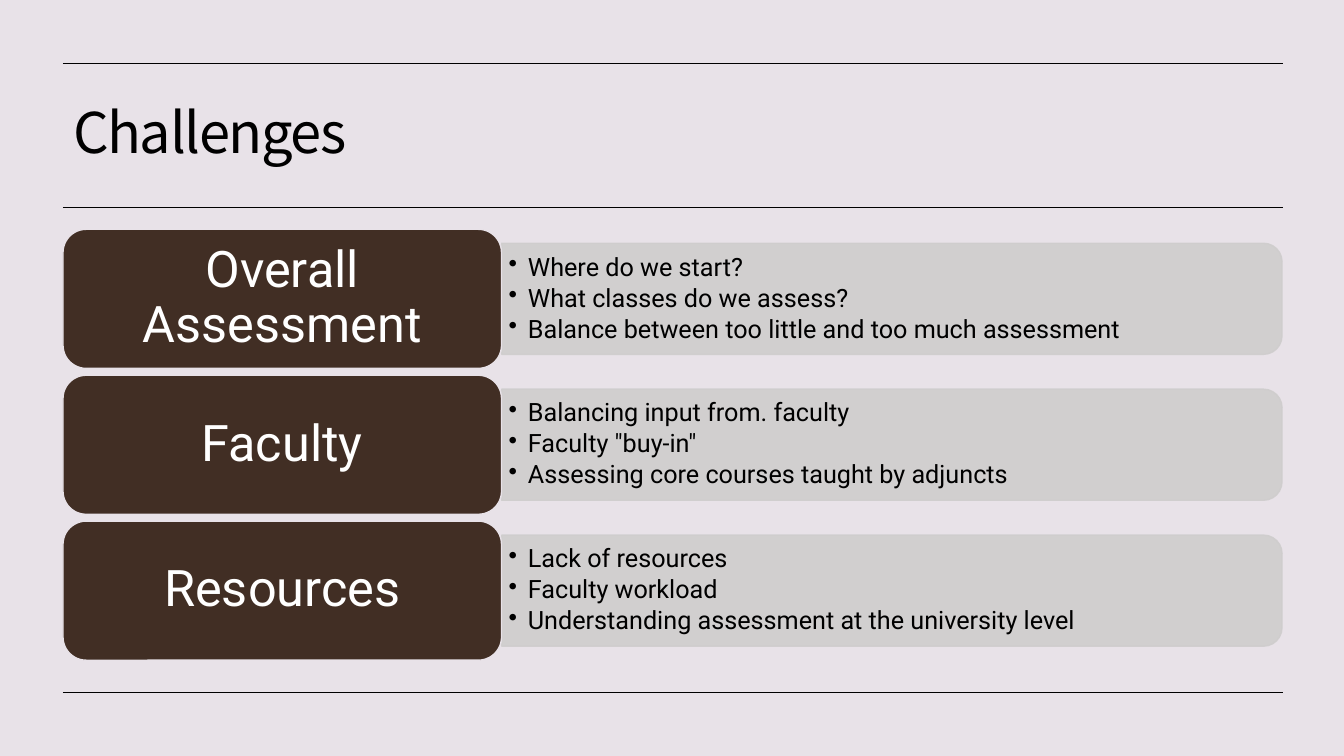
from dataclasses import dataclass

import pptx
import pptx.dml.color
import pptx.enum.shapes
import pptx.enum.text
import pptx.oxml
import pptx.oxml.ns
import pptx.util

BACKGROUND = pptx.dml.color.RGBColor(0xE8, 0xE2, 0xE8)
BAND = pptx.dml.color.RGBColor(0xCF, 0xCD, 0xCD)
BROWN = pptx.dml.color.RGBColor(0x41, 0x2E, 0x24)
BLACK = pptx.dml.color.RGBColor(0, 0, 0)
WHITE = pptx.dml.color.RGBColor(0xFF, 0xFF, 0xFF)
TITLE_FONT = "Noto Sans CJK KR"
BODY_FONT = "Roboto"

SLIDE_WIDTH = pptx.util.Inches(13.33)
SLIDE_HEIGHT = pptx.util.Inches(7.5)

# Grid of 100 columns by 100 rows
LEFT, RIGHT = 4.69, 95.47
RULE_ROWS = (8.33, 27.47, 91.6)
FIRST_ROW, ROW_PITCH = 30.33, 19.3
LABEL_WIDTH, LABEL_HEIGHT = 32.63, 18.4
BAND_LEFT, BAND_WIDTH, BAND_HEIGHT = 37.33, 58.06, 14.7
POINTS_WIDTH, POINTS_HEIGHT = 57.7, 13.33


@dataclass(frozen=True)
class Challenge:
    name: str
    points: tuple[str, ...]


CHALLENGES = (
    Challenge("Overall Assessment", (
        "Where do we start?",
        "What classes do we assess?",
        "Balance between too little and too much assessment",
    )),
    Challenge("Faculty", (
        "Balancing input from. faculty",
        'Faculty "buy-in"',
        "Assessing core courses taught by adjuncts",
    )),
    Challenge("Resources", (
        "Lack of resources",
        "Faculty workload",
        "Understanding assessment at the university level",
    )),
)


def columns(count: float) -> int:
    return round(SLIDE_WIDTH * count / 100)


def rows(count: float) -> int:
    return round(SLIDE_HEIGHT * count / 100)


def set_font(paragraph, name: str, size: float, color) -> None:
    paragraph.line_spacing = 0.9
    paragraph.font.name = name
    paragraph.font.size = pptx.util.Pt(size)
    paragraph.font.color.rgb = color


def set_frame(frame, side: float, top: float) -> None:
    """Wrap and centre the text vertically, with margins in inches."""
    frame.word_wrap = True
    frame.auto_size = pptx.enum.text.MSO_AUTO_SIZE.NONE
    frame.vertical_anchor = pptx.enum.text.MSO_ANCHOR.MIDDLE
    frame.margin_left = frame.margin_right = pptx.util.Inches(side)
    frame.margin_top = frame.margin_bottom = pptx.util.Inches(top)


def paint(shape, fill, line) -> None:
    shape.shadow.inherit = False
    shape.fill.solid()
    shape.fill.fore_color.rgb = fill
    shape.line.color.rgb = line
    shape.line.width = pptx.util.Pt(1)


def add_bullet(paragraph) -> None:
    properties = paragraph._p.get_or_add_pPr()
    indent = pptx.util.Inches(0.19)
    properties.set("marL", str(indent))
    properties.set("indent", str(-indent))
    bullet = pptx.oxml.ns.qn("a:buChar")
    properties.append(properties.makeelement(bullet, {"char": "•"}))


def add_title(slide) -> None:
    title = slide.shapes.title
    title.left, title.top = columns(LEFT), rows(10)
    title.width, title.height = columns(90.6), rows(15.87)
    set_frame(title.text_frame, 0.1, 0.05)
    title.text_frame.text = "Challenges"
    heading = title.text_frame.paragraphs[0]
    heading.alignment = pptx.enum.text.PP_ALIGN.LEFT
    set_font(heading, TITLE_FONT, 40, BLACK)
    heading.runs[0]._r.get_or_add_rPr().set("spc", "-100")


def add_rule(slide, row: float) -> None:
    rule = slide.shapes.add_connector(
        pptx.enum.shapes.MSO_CONNECTOR.STRAIGHT,
        columns(LEFT), rows(row), columns(RIGHT), rows(row))
    rule.line.color.rgb = BLACK
    rule.line.width = pptx.util.Pt(0.5)
    properties = rule.element.spPr
    properties.append(properties.makeelement(pptx.oxml.ns.qn("a:effectLst"), {}))


def add_band(slide, middle: float) -> None:
    """Turn a shape with two round top corners so that they face right."""
    thickness, length = rows(BAND_HEIGHT), columns(BAND_WIDTH)
    centre = columns(BAND_LEFT + BAND_WIDTH / 2)
    band = slide.shapes.add_shape(
        pptx.enum.shapes.MSO_SHAPE.ROUND_2_SAME_RECTANGLE,
        centre - thickness // 2, rows(middle) - length // 2, thickness, length)
    band.rotation = 90
    paint(band, BAND, BAND)
    for color in band.element.spPr.iter(pptx.oxml.ns.qn("a:srgbClr")):
        color.append(color.makeelement(pptx.oxml.ns.qn("a:alpha"), {"val": "90000"}))


def add_points(slide, points: tuple[str, ...], middle: float) -> None:
    box = slide.shapes.add_textbox(
        columns(BAND_LEFT), rows(middle - POINTS_HEIGHT / 2),
        columns(POINTS_WIDTH), rows(POINTS_HEIGHT))
    set_frame(box.text_frame, 0.07, 0.04)
    box.text_frame.text = "\n".join(points)
    for paragraph in box.text_frame.paragraphs:
        paragraph.space_after = pptx.util.Pt(2.7)
        paragraph.line_spacing = 0.9
        add_bullet(paragraph)
        set_font(paragraph, BODY_FONT, 18, BLACK)


def add_label(slide, name: str, top: float) -> None:
    label = slide.shapes.add_shape(
        pptx.enum.shapes.MSO_SHAPE.ROUNDED_RECTANGLE,
        columns(LEFT), rows(top), columns(LABEL_WIDTH), rows(LABEL_HEIGHT))
    paint(label, BROWN, BACKGROUND)
    set_frame(label.text_frame, 0.15, 0.07)
    label.text_frame.text = name
    paragraph = label.text_frame.paragraphs[0]
    paragraph.alignment = pptx.enum.text.PP_ALIGN.CENTER
    set_font(paragraph, BODY_FONT, 36, WHITE)


def main() -> None:
    deck = pptx.Presentation()
    deck.slide_width, deck.slide_height = SLIDE_WIDTH, SLIDE_HEIGHT
    slide = deck.slides.add_slide(deck.slide_layouts.get_by_name("Title Only"))
    slide.background.fill.solid()
    slide.background.fill.fore_color.rgb = BACKGROUND

    for row in RULE_ROWS:
        add_rule(slide, row)
    add_title(slide)
    for index, challenge in enumerate(CHALLENGES):
        top = FIRST_ROW + index * ROW_PITCH
        middle = top + LABEL_HEIGHT / 2
        add_band(slide, middle)
        add_points(slide, challenge.points, middle)
        add_label(slide, challenge.name, top)

    deck.save("out.pptx")


if __name__ == "__main__":
    main()
